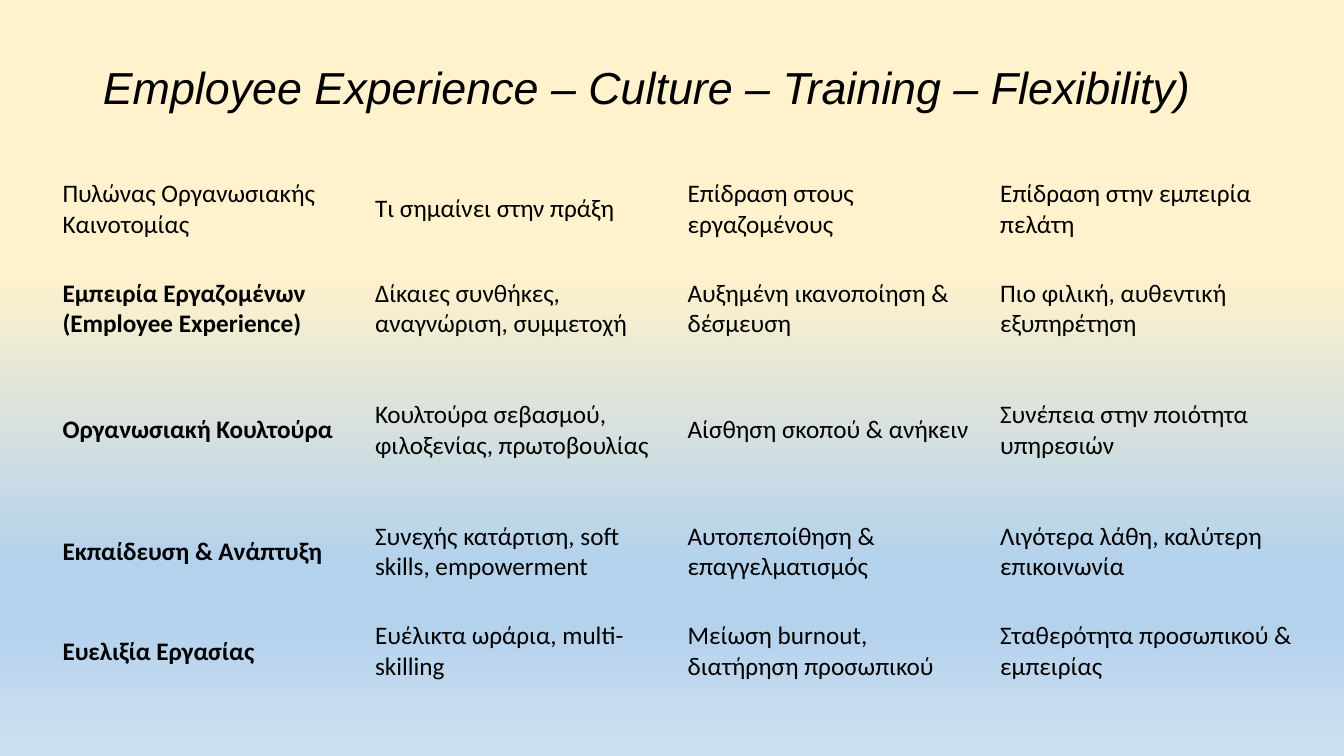
from lxml import etree
from pptx import Presentation
from pptx import util as u
from pptx.dml.color import RGBColor
from pptx.enum import text
from pptx.oxml.ns import qn

WIDTH, HEIGHT = 13.33, 7.5
PLAIN_TABLE = "{2D5ABB26-0587-4C30-8999-92F81FD0307C}"
BACKDROP = [(36, "FFF2CC"), (74, "B5D2EC"), (83, "B5D2EC"), (100, "CEE1F2")]
TITLE = "Employee Experience – Culture – Training – Flexibility)"
ROW_HEIGHTS = [0.99, 0.99, 1.42, 0.99, 0.99]
PILLARS = [
    ["Πυλώνας Οργανωσιακής Καινοτομίας", "Τι σημαίνει στην πράξη",
     "Επίδραση στους εργαζομένους", "Επίδραση στην εμπειρία πελάτη"],
    ["Εμπειρία Εργαζομένων (Employee Experience)",
     "Δίκαιες συνθήκες, αναγνώριση, συμμετοχή",
     "Αυξημένη ικανοποίηση & δέσμευση", "Πιο φιλική, αυθεντική εξυπηρέτηση"],
    ["Οργανωσιακή Κουλτούρα", "Κουλτούρα σεβασμού, φιλοξενίας, πρωτοβουλίας",
     "Αίσθηση σκοπού & ανήκειν", "Συνέπεια στην ποιότητα υπηρεσιών"],
    ["Εκπαίδευση & Ανάπτυξη", "Συνεχής κατάρτιση, soft skills, empowerment",
     "Αυτοπεποίθηση & επαγγελματισμός", "Λιγότερα λάθη, καλύτερη επικοινωνία"],
    ["Ευελιξία Εργασίας", "Ευέλικτα ωράρια, multi-skilling",
     "Μείωση burnout, διατήρηση προσωπικού", "Σταθερότητα προσωπικού & εμπειρίας"],
]


def color(value):
    return RGBColor.from_string(value)


class Board:
    """Holds the text style and the current slide; places are shares of its size."""

    ink = "000000"
    title_font, body_font = "Arial", "Calibri"
    title_size, body_size = 32, 18

    def __init__(self, deck):
        self.deck = deck
        self.page = deck.slides.add_slide(deck.slide_layouts[5])

    def area(self, left, top, width, height):
        across, down = self.deck.slide_width, self.deck.slide_height
        return (round(left * across), round(top * down),
                round(width * across), round(height * down))

    def style(self, para, font, size, bold=False, italic=False):
        para.alignment = text.PP_ALIGN.LEFT
        para.font.name, para.font.size = font, u.Pt(size)
        para.font.bold, para.font.italic = bold, italic
        para.font.color.rgb = color(self.ink)

    def backdrop(self, stops):
        """Fill the slide from top to bottom with (percent, colour) stops."""
        fill = self.page.background.fill
        fill.gradient()
        fill.gradient_angle = 270
        stop_list = next(self.page.element.iter(qn("a:gsLst")))
        for stop in list(stop_list):
            stop_list.remove(stop)
        for percent, shade in stops:
            stop = etree.SubElement(stop_list, qn("a:gs"), pos=str(percent * 1000))
            etree.SubElement(stop, qn("a:srgbClr"), val=shade)

    def title(self, words, *place):
        box = self.page.shapes.title
        box.left, box.top, box.width, box.height = self.area(*place)
        frame = box.text_frame
        frame.text = words
        frame.word_wrap = False
        frame.auto_size = text.MSO_AUTO_SIZE.NONE
        frame.vertical_anchor = text.MSO_ANCHOR.TOP
        frame.margin_top = u.Inches(0.11)
        para = frame.paragraphs[0]
        para.line_spacing = 0.9
        self.style(para, self.title_font, self.title_size, italic=True)

    def table(self, rows, heights, *place):
        """Add an unruled table whose first column is bold below the header."""
        frame = self.page.shapes.add_table(len(rows), len(rows[0]), *self.area(*place))
        table = frame.table
        table.first_row = table.horz_banding = False
        next(frame.element.iter(qn("a:tableStyleId"))).text = PLAIN_TABLE
        for row, height in zip(table.rows, heights):
            row.height = u.Inches(height)
        for r, words in enumerate(rows):
            for c, entry in enumerate(words):
                cell = table.cell(r, c)
                cell.text = entry
                cell.fill.background()
                cell.vertical_anchor = text.MSO_ANCHOR.MIDDLE
                self.style(cell.text_frame.paragraphs[0], self.body_font,
                           self.body_size, bold=r > 0 and c == 0)


def main():
    deck = Presentation()
    deck.slide_width, deck.slide_height = u.Inches(WIDTH), u.Inches(HEIGHT)
    board = Board(deck)
    board.backdrop(BACKDROP)
    board.table(PILLARS, ROW_HEIGHTS,
                0.52 / WIDTH, 1.58 / HEIGHT, 12.4 / WIDTH, sum(ROW_HEIGHTS) / HEIGHT)
    board.title(TITLE, 0.92 / WIDTH, 0.54 / HEIGHT, 11.08 / WIDTH, 1.18 / HEIGHT)
    deck.save("out.pptx")


if __name__ == "__main__":
    main()
